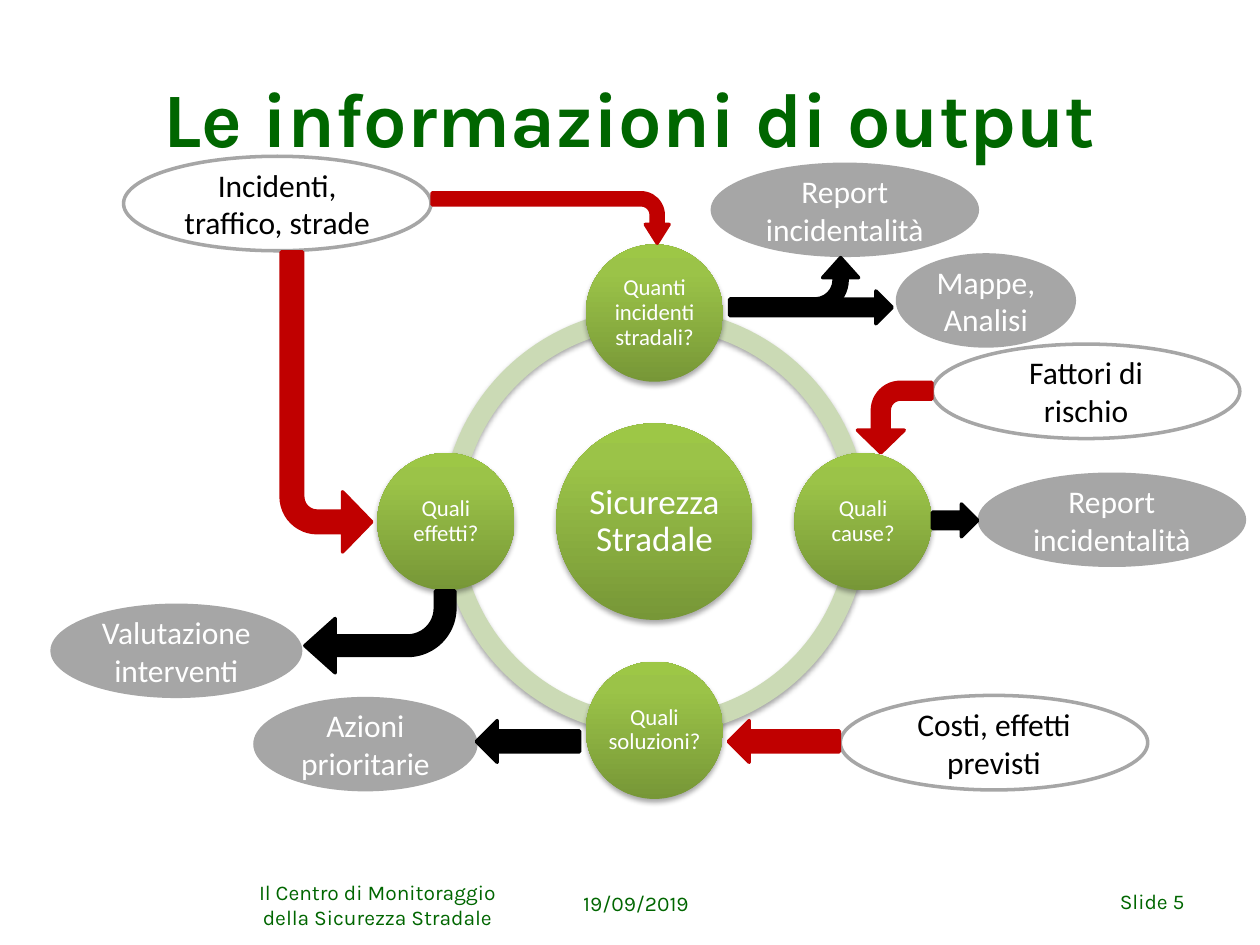
from math import cos, radians, sin

from lxml import etree
from pptx import Presentation
from pptx.dml.color import RGBColor
from pptx.enum.shapes import MSO_SHAPE
from pptx.enum.text import MSO_ANCHOR, PP_ALIGN
from pptx.oxml import parse_xml
from pptx.oxml.ns import qn
from pptx.util import Pt

OVAL, ARC = MSO_SHAPE.OVAL, MSO_SHAPE.BLOCK_ARC
BENT, ARROW = MSO_SHAPE.BENT_ARROW, MSO_SHAPE.LEFT_ARROW
LEFT, MID, RIGHT = PP_ALIGN.LEFT, PP_ALIGN.CENTER, PP_ALIGN.RIGHT
NS = 'xmlns:a="http://schemas.openxmlformats.org/drawingml/2006/main"'

THEME = {
    "green": "006600", "ring": "CBDAB5", "grey": "A6A6A6", "red": "C00000",
    "black": "000000", "white": "FFFFFF",
    "ball": [(0, "779737"), (80, "9BC348"), (100, "9DC746")],
    "head": "Karla", "body": "Calibri",
    "title": 44, "core": 20, "label": 18, "node": 13, "foot": 12,
}

deck = Presentation()
deck.slide_width, deck.slide_height = Pt(720), Pt(540)
slide = deck.slides.add_slide(deck.slide_layouts[6])


def draw(kind, box, fill=None, line=None, adj=()):
    shape = slide.shapes.add_shape(kind, *map(Pt, box))
    shape.shadow.inherit = False
    for paint, name in ((shape.fill, fill), (shape.line.fill, line)):
        if name:
            paint.solid()
            paint.fore_color.rgb = RGBColor.from_string(THEME[name])
        else:
            paint.background()
    if line:
        shape.line.width = Pt(2)
    for i, value in enumerate(adj):
        shape.adjustments[i] = value
    return shape


def write(shape, text, size, color, face="body", align=MID, bold=False, inset=None):
    frame = shape.text_frame
    frame.word_wrap = True
    frame.vertical_anchor = MSO_ANCHOR.MIDDLE
    if inset is not None:
        for side in ("left", "top", "right", "bottom"):
            setattr(frame, f"margin_{side}", Pt(inset))
    para = frame.paragraphs[0]
    para.text, para.alignment = text, align
    look = {"name": THEME[face], "size": Pt(THEME[size]), "bold": bold}
    for key, value in look.items():
        setattr(para.font, key, value)
    para.font.color.rgb = RGBColor.from_string(THEME[color])
    return para


# Soft shadow and gradient shared by the cycle
stops = "".join(f'<a:gs pos="{pos * 1000}"><a:srgbClr val="{color}"/></a:gs>'
                for pos, color in THEME["ball"])
GRAD = (f'<a:gradFill {NS} rotWithShape="1"><a:gsLst>{stops}</a:gsLst>'
        '<a:lin ang="16200000" scaled="0"/></a:gradFill>')
SHADE = ('<a:outerShdw blurRad="39370" dist="22860" dir="5400000" rotWithShape="0">'
         '<a:srgbClr val="000000"><a:alpha val="35000"/></a:srgbClr></a:outerShdw>')

# Title
write(slide.shapes.add_textbox(Pt(36), Pt(21.6), Pt(648), Pt(90)),
      "Le informazioni di output", "title", "green", "head", bold=True)

# Ring in four quarters; angles are in units of 100000/60000 degrees
CX, CY, RING, ORBIT = 374, 298.1, 244, 119.2
cycle = []
for start, end in ((108, 162), (54, 108), (0, 54), (162, 0)):
    box = (CX - RING / 2, CY - RING / 2, RING, RING)
    cycle.append(draw(ARC, box, "ring", adj=(start, end, 0.046)))

# Core and the four questions around it
balls = [("Sicurezza Stradale", None, 112.3, "core", 2)]
for turn, text in enumerate(("Quanti incidenti stradali?", "Quali cause?",
                             "Quali soluzioni?", "Quali effetti?")):
    balls.append((text, turn * 90 - 90, 78.5, "node", 1.3))
for text, angle, size, font, inset in balls:
    x, y = CX, CY
    if angle is not None:
        x += ORBIT * cos(radians(angle))
        y += ORBIT * sin(radians(angle))
    ball = draw(OVAL, (x - size / 2, y - size / 2, size, size), "ring")
    props = ball._element.spPr
    props.replace(props.find(qn("a:solidFill")), parse_xml(GRAD))
    write(ball, text, font, "white", inset=inset).line_spacing = 0.9
    cycle.append(ball)
for shape in cycle:
    effects = shape._element.spPr.find(qn("a:effectLst"))
    effects.append(etree.fromstring(SHADE.replace("<a:outerShdw", f"<a:outerShdw {NS}")))

# Footer
for x, y, w, text, align in (
        (326.2, 501.8, 79.2, "19/09/2019", LEFT),
        (620.6, 500.4, 63.4, "Slide 5", RIGHT),
        (139, 502.6, 153.4, "Il Centro di Monitoraggio della Sicurezza Stradale", MID)):
    write(slide.shapes.add_textbox(Pt(x), Pt(y), Pt(w), Pt(28.8)),
          text, "foot", "green", "head", align)

# Inputs are outlined, outputs are filled
for x, y, text in ((70.6, 89.3, "Incidenti, traffico, strade"),
                   (532.8, 196.6, "Fattori di rischio"),
                   (480.2, 397.4, "Costi, effetti previsti")):
    write(draw(OVAL, (x, y, 175.7, 54), line="grey"), text, "label", "black")
for x, y, w, text in ((406.1, 92.9, 153.4, "Report incidentalità"),
                      (511.9, 144.7, 103, "Mappe, Analisi"),
                      (558.7, 270, 153.4, "Report incidentalità"),
                      (144.7, 398.2, 128.2, "Azioni prioritarie"),
                      (28.8, 344.9, 144, "Valutazione interventi")):
    write(draw(OVAL, (x, y, w, 54), "grey"), text, "label", "white")

# Arrows: kind, colour, box, rotation, flipped, adjustments
for kind, color, box, turn, flip, adj in (
        (BENT, "red", (300.2, 56.9, 28.8, 135.4), 90, False, (0.238, 0.236, 0.374, 0.438)),
        (BENT, "red", (160.6, 144, 51.8, 171.4), 180, True, (0.238, 0.332, 0.322, 0.398)),
        (BENT, "red", (491, 217.4, 40.3, 42.5), 270, True, (0.238, 0.332, 0.322, 0.398)),
        (ARROW, "red", (416.2, 411.8, 63.4, 23.8), 0, False, ()),
        (BENT, "black", (438.5, 126, 31, 73.4), 90, True, (0.238, 0.332, 0.37, 0.591)),
        (ARROW, "black", (416.9, 166.3, 92.9, 18.7), 180, False, ()),
        (ARROW, "black", (532.8, 288, 25.9, 18.7), 180, False, ()),
        (ARROW, "black", (272.2, 411.8, 59, 23.8), 0, False, ()),
        (BENT, "black", (174.2, 337.7, 85.7, 46.8), 180, False, (0.238, 0.332, 0.37, 0.578))):
    arrow = draw(kind, box, color, color, adj)
    arrow.rotation = turn
    if flip:
        arrow._element.spPr.find(qn("a:xfrm")).set("flipH", "1")

deck.save("out.pptx")
